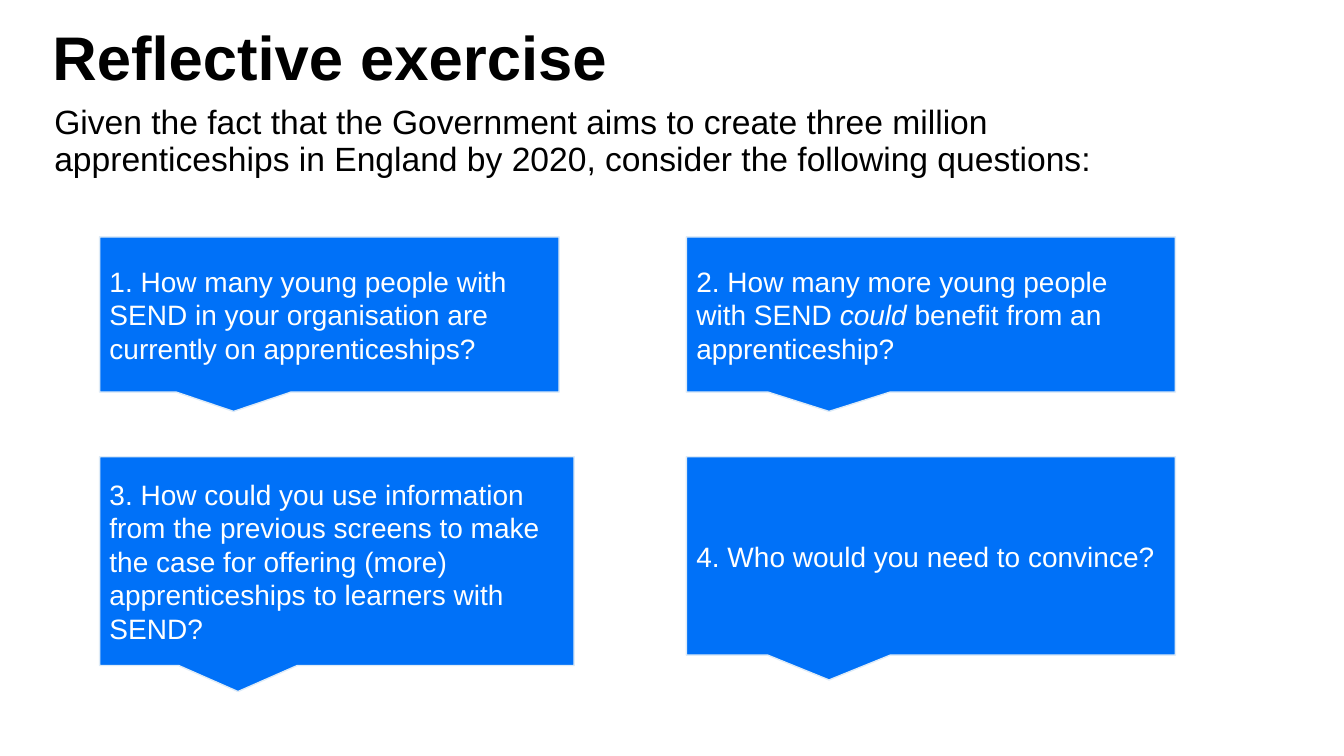
"""Build the "Reflective exercise" slide with four question callouts."""
from dataclasses import dataclass

from pptx import Presentation
from pptx.dml.color import RGBColor
from pptx.enum.shapes import MSO_SHAPE as SHAPE
from pptx.enum.text import MSO_ANCHOR as ANCHOR, PP_ALIGN as ALIGN
from pptx.util import Cm, Pt

TITLE = [("Reflective exercise", False)]
INTRO = [("Given the fact that the Government aims to create three million "
          "apprenticeships in England by 2020, consider the following questions:", False)]
QUESTIONS = [
    {"size": (11.58, 3.91), "runs": [
        ("1. How many young people with SEND in your organisation are "
         "currently on apprenticeships?", False)]},
    {"size": (12.32, 3.91), "runs": [
        ("2. How many more young people with SEND ", False),
        ("could", True),
        (" benefit from an apprenticeship?", False)]},
    {"size": (11.96, 5.26), "runs": [
        ("3. How could you use information from the previous screens to make the case "
         "for offering (more) apprenticeships to learners with SEND?", False)]},
    {"size": (12.32, 5), "runs": [
        ("4. Who would you need to convince?", False)]},
]
COLUMNS = (2.51, 17.3)
ROWS = (5.97, 11.51)


@dataclass(frozen=True)
class Theme:
    font: str = "Arial"
    text: str = "000000"
    fill: str = "0071F8"
    line: str = "DEEBF7"
    on_fill: str = "FFFFFF"
    title_size: int = 44
    intro_size: int = 24
    question_size: int = 20


THEME = Theme()


def rgb(value):
    return RGBColor.from_string(value)


def write(sp, runs, size, color, anchor, bold=False):
    tf = sp.text_frame
    tf.word_wrap = True
    tf.vertical_anchor = anchor
    p = tf.paragraphs[0]
    p.alignment = ALIGN.LEFT
    for text, italic in runs:
        r = p.add_run()
        r.text = text
        r.font.name = THEME.font
        r.font.size = Pt(size)
        r.font.bold = bold
        r.font.italic = italic
        r.font.color.rgb = rgb(color)
    return p


def add_heading(s, box, runs, size, anchor, bold=False):
    sp = s.shapes.add_textbox(*map(Cm, box))
    p = write(sp, runs, size, THEME.text, anchor, bold)
    p.line_spacing = 0.9
    return p


def add_question(s, left, top, question):
    box = (left, top, *question["size"])
    sp = s.shapes.add_shape(SHAPE.RECTANGULAR_CALLOUT, *map(Cm, box))
    sp.shadow.inherit = False
    sp.fill.solid()
    sp.fill.fore_color.rgb = rgb(THEME.fill)
    sp.line.color.rgb = rgb(THEME.line)
    sp.line.width = Pt(1)
    write(sp, question["runs"], THEME.question_size, THEME.on_fill, ANCHOR.MIDDLE)


def main():
    prs = Presentation()
    prs.slide_width, prs.slide_height = Cm(33.87), Cm(19.05)
    s = prs.slides.add_slide(prs.slide_layouts[6])
    add_heading(s, (1.07, 0.03, 29.21, 3), TITLE, THEME.title_size, ANCHOR.MIDDLE, bold=True)
    intro = add_heading(s, (1.12, 2.54, 29.21, 2.46), INTRO, THEME.intro_size, ANCHOR.TOP)
    intro.space_before = Pt(10)
    for i, question in enumerate(QUESTIONS):
        row, column = divmod(i, len(COLUMNS))
        add_question(s, COLUMNS[column], ROWS[row], question)
    prs.save("out.pptx")


if __name__ == "__main__":
    main()
